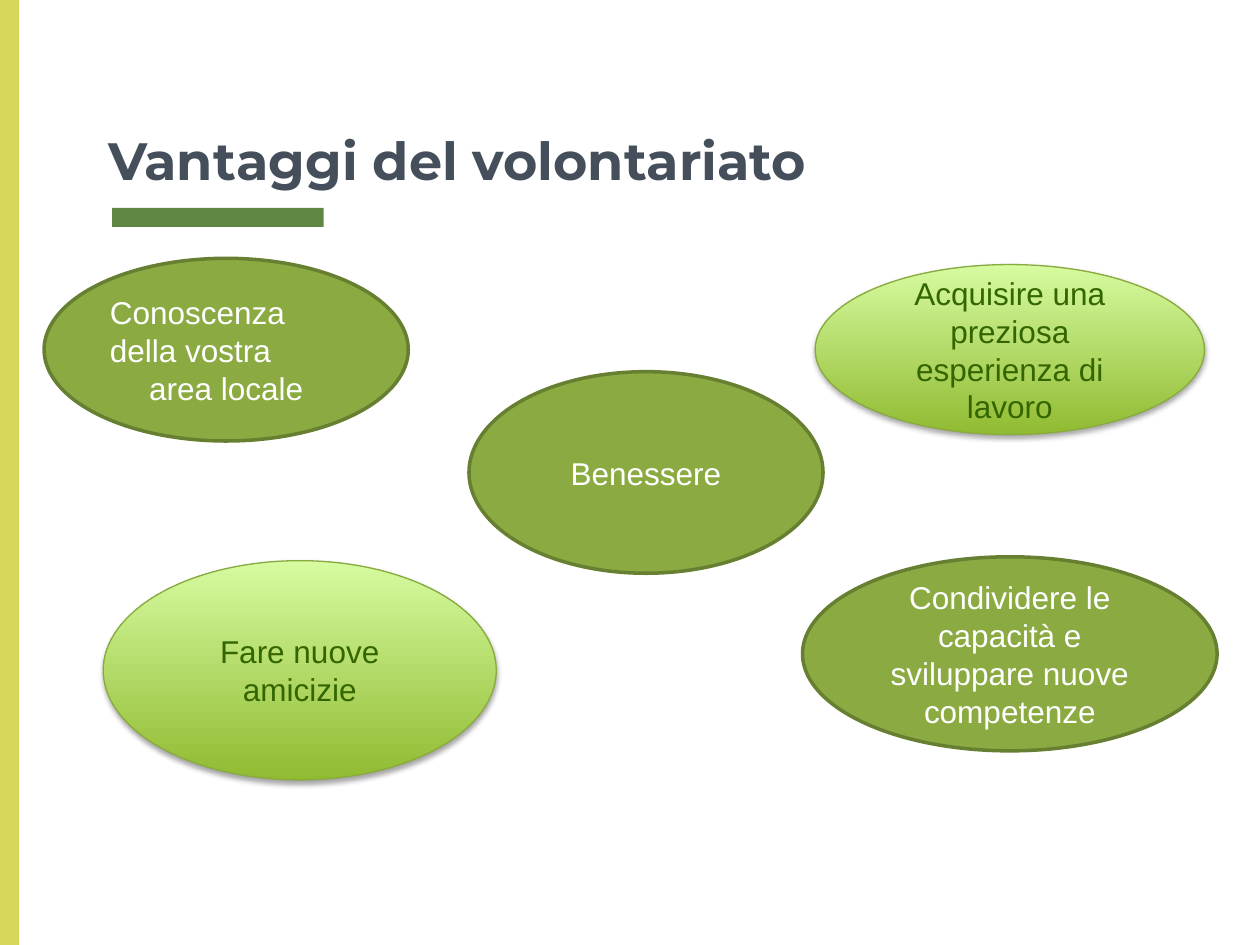
from dataclasses import dataclass
from lxml.etree import SubElement as Sub
from pptx import Presentation as Deck
from pptx.dml.color import RGBColor as Rgb
from pptx.enum.shapes import MSO_SHAPE as Kind
from pptx.enum.text import MSO_ANCHOR as Anchor, MSO_AUTO_SIZE as Fit, PP_ALIGN as Align
from pptx.oxml.ns import qn
from pptx.util import Pt


@dataclass(frozen=True)
class Theme:
    lime: str = "D5D85A"
    green: str = "608643"
    slate: str = "454F5B"
    olive: str = "8BAB42"
    edge: str = "677F31"
    white: str = "FFFFFF"
    base: str = "91BB32"
    glow: str = "D6FBA0"
    rim: str = "89AA3E"
    dark: str = "336600"
    shade: str = "000000"
    head: str = "Montserrat"
    body: str = "Arial"
    big: int = 30
    small: int = 18


class Page:
    """Draws styled elements on one slide."""

    def __init__(self, slide, theme):
        self.slide, self.theme = slide, theme

    def font(self, para, name, size, color, bold=False):
        font = para.font
        font.name, font.size, font.bold = name, Pt(size), bold
        font.color.rgb = Rgb.from_string(color)

    def title(self, text, box):
        look, shape = self.theme, self.slide.shapes.title
        shape.left, shape.top, shape.width, shape.height = map(Pt, box)
        frame = shape.text_frame
        frame.text = text
        frame.word_wrap, frame.auto_size = True, Fit.NONE
        frame.vertical_anchor = Anchor.BOTTOM
        frame.margin_left = frame.margin_right = Pt(7.2)
        frame.margin_top = frame.margin_bottom = Pt(7.2)
        para = frame.paragraphs[0]
        para.alignment = Align.LEFT
        self.font(para, look.head, look.big, look.slate, True)

    def shape(self, kind, box):
        shape = self.slide.shapes.add_shape(kind, *map(Pt, box))
        shape.shadow.inherit = False
        return shape

    def bar(self, box, color):
        shape = self.shape(Kind.RECTANGLE, box)
        shape.fill.solid()
        shape.fill.fore_color.rgb = Rgb.from_string(color)
        shape.line.fill.background()

    def oval(self, box, lines, edge, width, color):
        look, shape = self.theme, self.shape(Kind.OVAL, box)
        shape.line.color.rgb = Rgb.from_string(edge)
        shape.line.width = Pt(width)
        frame = shape.text_frame
        frame.word_wrap, frame.vertical_anchor = True, Anchor.MIDDLE
        frame.text = "\n".join(text for text, _ in lines)
        for para, (_, side) in zip(frame.paragraphs, lines):
            para.alignment = side
            self.font(para, look.body, look.small, color)
        return shape

    def flat(self, box, *lines):
        look = self.theme
        shape = self.oval(box, lines, look.edge, 2, look.white)
        shape.fill.solid()
        shape.fill.fore_color.rgb = Rgb.from_string(look.olive)

    def glossy(self, box, *lines):
        look = self.theme
        shape = self.oval(box, lines, look.rim, 0.75, look.dark)
        shape.fill.gradient()
        shape.fill.gradient_angle = 90
        for stop, color, spot in zip(shape.fill.gradient_stops, (look.base, look.glow), (0, 1)):
            stop.color.rgb, stop.position = Rgb.from_string(color), spot
        self.shade(shape)

    def shade(self, shape):
        effect = shape.element.spPr.find(qn("a:effectLst"))
        outer = Sub(effect, qn("a:outerShdw"), blurRad=str(Pt(3.1)),
                    dist=str(Pt(1.8)), dir="5400000", rotWithShape="0")
        color = Sub(outer, qn("a:srgbClr"), val=self.theme.shade)
        Sub(color, qn("a:alpha"), val="35000")


def main():
    deck = Deck()
    deck.slide_width, deck.slide_height = Pt(720), Pt(540)
    theme = Theme()
    page = Page(deck.slides.add_slide(deck.slide_layouts[5]), theme)
    mid = Align.CENTER
    page.bar((64, 118.8, 121, 10.8), theme.green)
    page.bar((0, 0, 10.8, 540), theme.lime)
    page.title("Vantaggi del volontariato", (54.7, 19.4, 458, 97.2))
    page.flat((268, 212.4, 202.3, 115.2), ("Benessere", mid))
    page.glossy((465.8, 151.2, 222.5, 97.2),
                ("Acquisire una preziosa esperienza di lavoro", mid))
    page.flat((25.2, 147.6, 208.1, 104.4),
              ("Conoscenza della vostra", Align.LEFT), ("area locale", mid))
    page.glossy((59, 320.4, 224.6, 125.3), ("Fare nuove amicizie", mid))
    page.flat((458.6, 318.2, 236.9, 110.9),
              ("Condividere le capacità e sviluppare nuove competenze", mid))
    deck.save("out.pptx")


if __name__ == "__main__":
    main()
